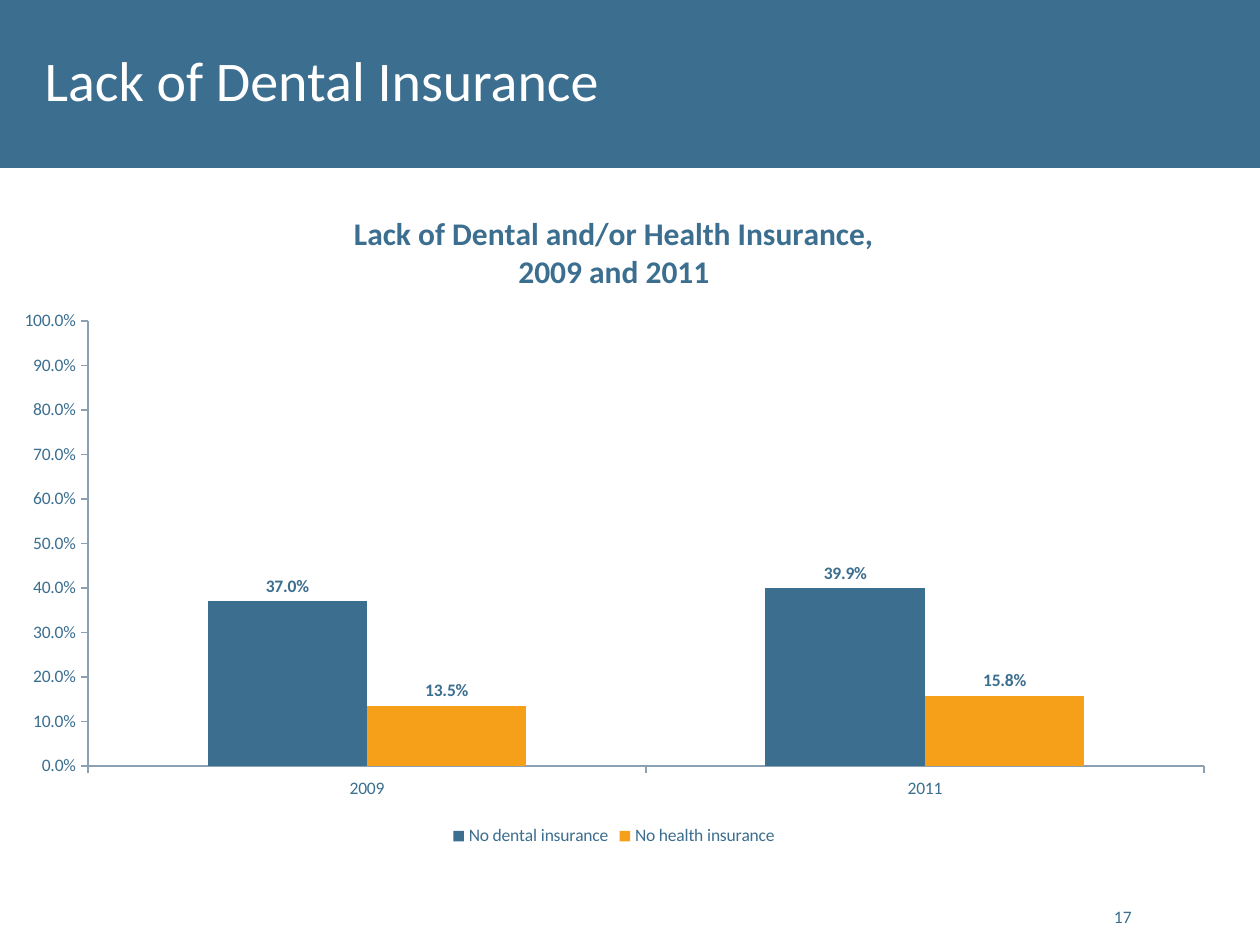
from dataclasses import dataclass

from lxml.etree import SubElement
from pptx import Presentation
from pptx.chart.data import CategoryChartData
from pptx.dml.color import RGBColor
from pptx.enum.chart import XL_CHART_TYPE, XL_LABEL_POSITION, XL_LEGEND_POSITION, XL_TICK_MARK
from pptx.enum.shapes import MSO_SHAPE
from pptx.enum.text import MSO_ANCHOR, PP_ALIGN
from pptx.oxml.ns import qn
from pptx.util import Emu, Pt


@dataclass(frozen=True)
class Theme:
    font: str = "Calibri"
    blue: RGBColor = RGBColor(0x3B, 0x6E, 0x8F)
    orange: RGBColor = RGBColor(0xF6, 0xA0, 0x1A)
    axis: RGBColor = RGBColor(0x8C, 0xA0, 0xB4)
    white: RGBColor = RGBColor(0xFF, 0xFF, 0xFF)
    title_size: int = 32
    chart_title_size: int = 18
    body_size: int = 10


THEME = Theme()
PERCENT = "0.0%"
CHART_BOX = (0, 189, 1228, 662)
PLOT_BOX = (88, 321, 1116, 445)


def px(value):
    return Emu(round(value * 914400 / 126))


def box(*lengths):
    return [px(length) for length in lengths]


def style_font(font, size, color, bold=False):
    font.name = THEME.font
    font.size = Pt(size)
    font.bold = bold
    font.color.rgb = color


def add_banner(slide):
    shape = slide.shapes.add_shape(MSO_SHAPE.RECTANGLE, *box(0, 0, 1260, 168))
    shape.shadow.inherit = False
    shape.fill.solid()
    shape.fill.fore_color.rgb = THEME.blue
    shape.line.fill.background()
    slide.shapes._spTree.insert(2, shape._element)


def set_title(slide, text):
    title = slide.shapes.title
    title.left, title.top, title.width, title.height = box(32, 32, 1197, 94)
    text_frame = title.text_frame
    text_frame.text = text
    text_frame.vertical_anchor = MSO_ANCHOR.MIDDLE
    paragraph = text_frame.paragraphs[0]
    paragraph.alignment = PP_ALIGN.LEFT
    style_font(paragraph.runs[0].font, THEME.title_size, THEME.white)


def add_page_number(slide, text):
    text_frame = slide.shapes.add_textbox(*box(1094, 883, 50, 50)).text_frame
    text_frame.word_wrap = True
    text_frame.vertical_anchor = MSO_ANCHOR.BOTTOM
    text_frame.text = text
    paragraph = text_frame.paragraphs[0]
    paragraph.alignment = PP_ALIGN.RIGHT
    style_font(paragraph.runs[0].font, THEME.body_size, THEME.blue)


def set_chart_title(chart, lines):
    text_frame = chart.chart_title.text_frame
    text_frame.text = "\n".join(lines)
    for paragraph in text_frame.paragraphs:
        paragraph.alignment = PP_ALIGN.CENTER
        style_font(paragraph.runs[0].font, THEME.chart_title_size, THEME.blue, True)
    chart.chart_title.include_in_layout = False


def place_plot(chart):
    left, top, width, height = CHART_BOX
    plot_left, plot_top, plot_width, plot_height = PLOT_BOX
    plot_area = chart._chartSpace.chart.plotArea
    for old_layout in plot_area.findall(qn("c:layout")):
        plot_area.remove(old_layout)
    layout = SubElement(plot_area, qn("c:layout"))
    plot_area.insert(0, layout)
    manual = SubElement(layout, qn("c:manualLayout"))
    settings = {
        "layoutTarget": "inner",
        "xMode": "edge",
        "yMode": "edge",
        "x": (plot_left - left) / width,
        "y": (plot_top - top) / height,
        "w": plot_width / width,
        "h": plot_height / height,
    }
    for name, value in settings.items():
        SubElement(manual, qn(f"c:{name}")).set("val", str(value))


def style_axis(axis):
    axis.has_major_gridlines = False
    axis.major_tick_mark = XL_TICK_MARK.OUTSIDE
    axis.minor_tick_mark = XL_TICK_MARK.NONE
    axis.format.line.color.rgb = THEME.axis
    axis.format.line.width = Pt(0.75)
    style_font(axis.tick_labels.font, THEME.body_size, THEME.blue)


def style_series(series, color):
    series.format.fill.solid()
    series.format.fill.fore_color.rgb = color
    labels = series.data_labels
    labels.show_value = True
    labels.number_format = PERCENT
    labels.number_format_is_linked = False
    labels.position = XL_LABEL_POSITION.OUTSIDE_END
    style_font(labels.font, THEME.body_size, THEME.blue, True)


def add_insurance_chart(slide):
    data = CategoryChartData(number_format=PERCENT)
    data.categories = ["2009", "2011"]
    data.add_series("No dental insurance", [0.37, 0.399])
    data.add_series("No health insurance", [0.135, 0.158])
    chart = slide.shapes.add_chart(
        XL_CHART_TYPE.COLUMN_CLUSTERED, *box(*CHART_BOX), data
    ).chart
    style_font(chart.font, THEME.body_size, THEME.blue)
    set_chart_title(chart, ["Lack of Dental and/or Health Insurance,", "2009 and 2011"])
    place_plot(chart)

    plot = chart.plots[0]
    plot.vary_by_categories = False
    plot.gap_width = 150
    plot.overlap = 0
    for series, color in zip(plot.series, (THEME.blue, THEME.orange)):
        style_series(series, color)

    for axis in (chart.category_axis, chart.value_axis):
        style_axis(axis)
    value_axis = chart.value_axis
    value_axis.minimum_scale = 0
    value_axis.maximum_scale = 1
    value_axis.major_unit = 0.1
    value_axis.tick_labels.number_format = PERCENT
    value_axis.tick_labels.number_format_is_linked = False

    chart.has_legend = True
    chart.legend.position = XL_LEGEND_POSITION.BOTTOM
    chart.legend.include_in_layout = False
    style_font(chart.legend.font, THEME.body_size, THEME.blue)


def main():
    presentation = Presentation()
    presentation.slide_width, presentation.slide_height = box(1260, 945)
    slide = presentation.slides.add_slide(presentation.slide_layouts[5])
    add_banner(slide)
    set_title(slide, "Lack of Dental Insurance")
    add_page_number(slide, "17")
    add_insurance_chart(slide)
    presentation.save("out.pptx")


if __name__ == "__main__":
    main()
